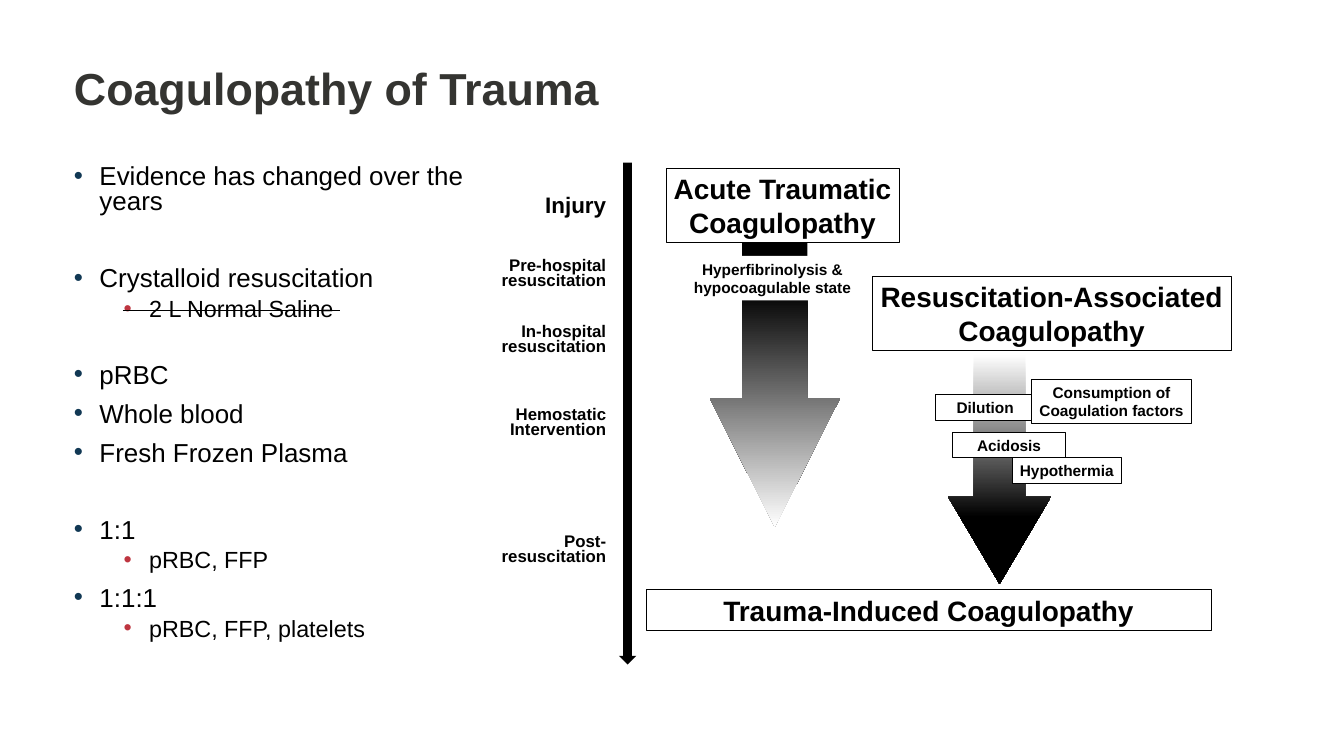
from dataclasses import dataclass

from lxml.etree import SubElement
from pptx import Presentation
from pptx.dml.color import RGBColor
from pptx.enum.shapes import MSO_CONNECTOR, MSO_SHAPE
from pptx.enum.text import MSO_ANCHOR, MSO_AUTO_SIZE, PP_ALIGN
from pptx.oxml.ns import qn
from pptx.util import Inches, Pt

COLUMNS, ROWS = 20, 11.25
CELL = Inches(1)


@dataclass(frozen=True)
class Theme:
    """Colours, font and type sizes of the slide."""
    font: str = "Arial"
    black: str = "000000"
    white: str = "FFFFFF"
    title: str = "343431"
    bullets: tuple = ("113854", "BE3540")
    title_size: float = 48
    list_sizes: tuple = (27.8, 25)
    list_gaps: tuple = (15, 7.5)
    heading: float = 30
    injury: float = 24
    stage: float = 18
    detail: float = 16.5
    border: float = 0.75
    strike: float = 0.5


THEME = Theme()

# Each list item: level, text, size of the open space above it in points
LIST_ITEMS = [
    (0, "Evidence has changed over the years", 0),
    (0, "Crystalloid resuscitation", 40.6),
    (1, "2 L Normal Saline", 0),
    (0, "pRBC", 30.5),
    (0, "Whole blood", 0),
    (0, "Fresh Frozen Plasma", 0),
    (0, "1:1", 40.6),
    (1, "pRBC, FFP", 0),
    (0, "1:1:1", 0),
    (1, "pRBC, FFP, platelets", 0),
]

STAGES = [
    ("Pre-hospital\nresuscitation", 3.8),
    ("In-hospital\nresuscitation", 4.78),
    ("Hemostatic\nIntervention", 6.01),
    ("Post-\nresuscitation", 7.9),
]

FACTORS = [
    ("Dilution", (13.92, 5.87, 1.48, 0.38)),
    ("Acidosis", (14.17, 6.43, 1.69, 0.38)),
    ("Consumption of\nCoagulation factors", (15.35, 5.64, 2.38, 0.66)),
    ("Hypothermia", (15.07, 6.81, 1.61, 0.38)),
]


def cells(*lengths):
    """Turn grid columns and rows into slide lengths."""
    return [round(length * CELL) for length in lengths]


def rgb(colour):
    """Return a colour object for a hex string."""
    return RGBColor.from_string(colour)


def style_font(font, size, colour=THEME.black, bold=False):
    """Format one font with the theme's typeface."""
    font.name, font.size, font.bold = THEME.font, Pt(size), bold
    font.color.rgb = rgb(colour)


def write(frame, text, size, colour=THEME.black, bold=True,
          align=PP_ALIGN.CENTER, spacing=None, wrap=False):
    """Write one paragraph per line of text in a middle-anchored frame."""
    frame.word_wrap = wrap
    frame.auto_size = MSO_AUTO_SIZE.NONE
    frame.vertical_anchor = MSO_ANCHOR.MIDDLE
    for index, line in enumerate(text.split("\n")):
        paragraph = frame.add_paragraph() if index else frame.paragraphs[0]
        paragraph.text = line
        paragraph.alignment = align
        paragraph.line_spacing = spacing
        style_font(paragraph.runs[0].font, size, colour, bold)


def place(shape, *area):
    """Move a placeholder to an area of the grid."""
    shape.left, shape.top, shape.width, shape.height = cells(*area)


def add_box(slide, text, area, size, filled=True, bordered=True):
    """Add a labelled rectangle."""
    shape = slide.shapes.add_shape(MSO_SHAPE.RECTANGLE, *cells(*area))
    shape.shadow.inherit = False
    if filled:
        shape.fill.solid()
        shape.fill.fore_color.rgb = rgb(THEME.white)
    else:
        shape.fill.background()
    if bordered:
        shape.line.color.rgb = rgb(THEME.black)
        shape.line.width = Pt(THEME.border)
    else:
        shape.line.fill.background()
    write(shape.text_frame, text, size)


def add_down_arrow(slide, area, head=0.5, stops=None):
    """Add a down arrow, black or with a vertical gradient."""
    shape = slide.shapes.add_shape(MSO_SHAPE.DOWN_ARROW, *cells(*area))
    shape.shadow.inherit = False
    shape.adjustments[1] = head
    shape.line.fill.background()
    if stops:
        shape.fill.gradient()
        shape.fill.gradient_angle = 270
        for stop, (position, colour) in zip(shape.fill.gradient_stops, stops):
            stop.position = position
            stop.color.rgb = rgb(colour)
    else:
        shape.fill.solid()
        shape.fill.fore_color.rgb = rgb(THEME.black)


def add_stage(slide, text, top, size, height=0.58, spacing=None):
    """Add a right-aligned label beside the timeline."""
    label = slide.shapes.add_textbox(*cells(7.35, top, 1.77, height))
    write(label.text_frame, text, size, align=PP_ALIGN.RIGHT, spacing=spacing)


def add_bullet(paragraph, level):
    """Give a paragraph its hanging indent and coloured bullet."""
    properties = paragraph._p.get_or_add_pPr()
    properties.set("marL", str(Inches((0.38, 1.12)[level])))
    properties.set("indent", str(Inches(-0.38)))
    colour = SubElement(properties, qn("a:buClr"))
    SubElement(colour, qn("a:srgbClr"), val=THEME.bullets[level])
    SubElement(properties, qn("a:buFont"), typeface=THEME.font)
    SubElement(properties, qn("a:buChar"), char="•")


def fill_list(frame):
    """Write the bulleted list."""
    frame.word_wrap = True
    frame.auto_size = MSO_AUTO_SIZE.NONE
    frame.vertical_anchor = MSO_ANCHOR.TOP
    for index, (level, text, space) in enumerate(LIST_ITEMS):
        paragraph = frame.add_paragraph() if index else frame.paragraphs[0]
        paragraph.text = text
        paragraph.level = level
        add_bullet(paragraph, level)
        paragraph.line_spacing = 0.8
        paragraph.space_before = Pt(THEME.list_gaps[level] + space if index else 0)
        style_font(paragraph.runs[0].font, THEME.list_sizes[level])


def add_strike(slide, left, right, row):
    """Draw a thin line through a list item."""
    line = slide.shapes.add_connector(
        MSO_CONNECTOR.STRAIGHT, *cells(left, row, right, row))
    line.line.color.rgb = rgb(THEME.black)
    line.line.width = Pt(THEME.strike)
    SubElement(line._element.spPr, qn("a:effectLst"))


def main():
    """Build and save the slide."""
    presentation = Presentation()
    presentation.slide_width, presentation.slide_height = cells(COLUMNS, ROWS)
    slide = presentation.slides.add_slide(presentation.slide_layouts[1])

    title, body = slide.placeholders
    place(title, 1, 0.33, 17.62, 1.94)
    write(title.text_frame, "Coagulopathy of Trauma", THEME.title_size,
          colour=THEME.title, align=PP_ALIGN.LEFT, wrap=True)
    place(body, 1, 2.42, 6.45, 7.75)
    fill_list(body.text_frame)

    add_down_arrow(slide, (10.56, 3.59, 1.94, 4.25), 0.987,
                   [(0.17, THEME.black), (1, THEME.white)])
    add_box(slide, "Acute Traumatic\nCoagulopathy", (9.91, 2.5, 3.47, 1.11), THEME.heading)
    add_box(slide, "Trauma-Induced Coagulopathy", (9.62, 8.77, 8.4, 0.61), THEME.heading)
    add_down_arrow(slide, (9.21, 2.42, 0.26, 7.47))
    add_box(slide, "Hyperfibrinolysis &\nhypocoagulable state",
            (10.21, 3.81, 2.57, 0.66), THEME.detail, bordered=False)
    add_down_arrow(slide, (14.11, 5.27, 1.53, 3.42), 0.847,
                   [(0, THEME.white), (0.71, THEME.black)])

    add_stage(slide, "Injury", 2.79, THEME.injury, height=0.5)
    for text, top in STAGES:
        add_stage(slide, text, top, THEME.stage, spacing=Pt(16.5))

    add_box(slide, "Resuscitation-Associated\nCoagulopathy",
            (12.98, 4.11, 5.34, 1.11), THEME.heading, filled=False)
    for text, area in FACTORS:
        add_box(slide, text, area, THEME.detail)
    add_strike(slide, 1.83, 5.06, 4.62)
    presentation.save("out.pptx")


if __name__ == "__main__":
    main()
